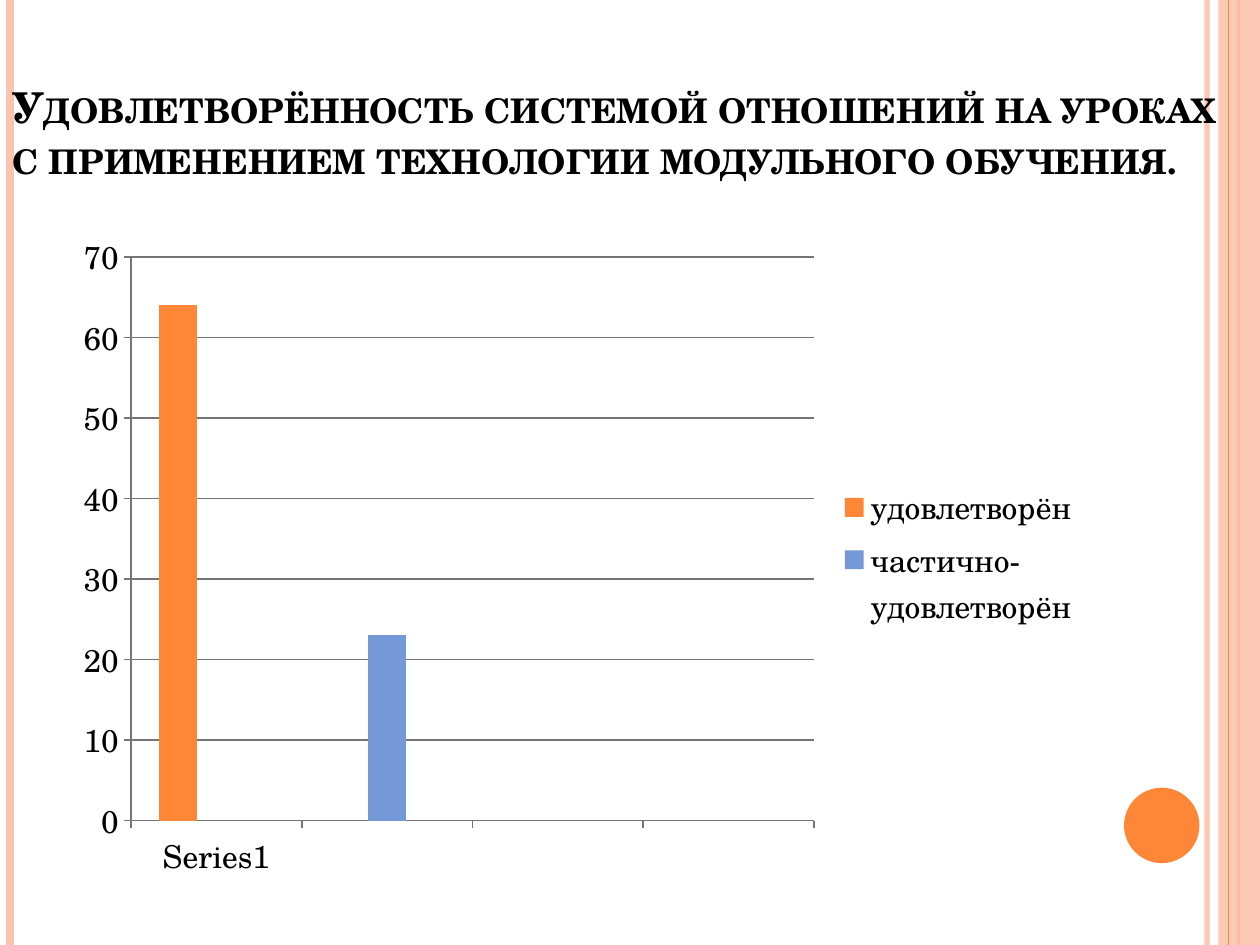
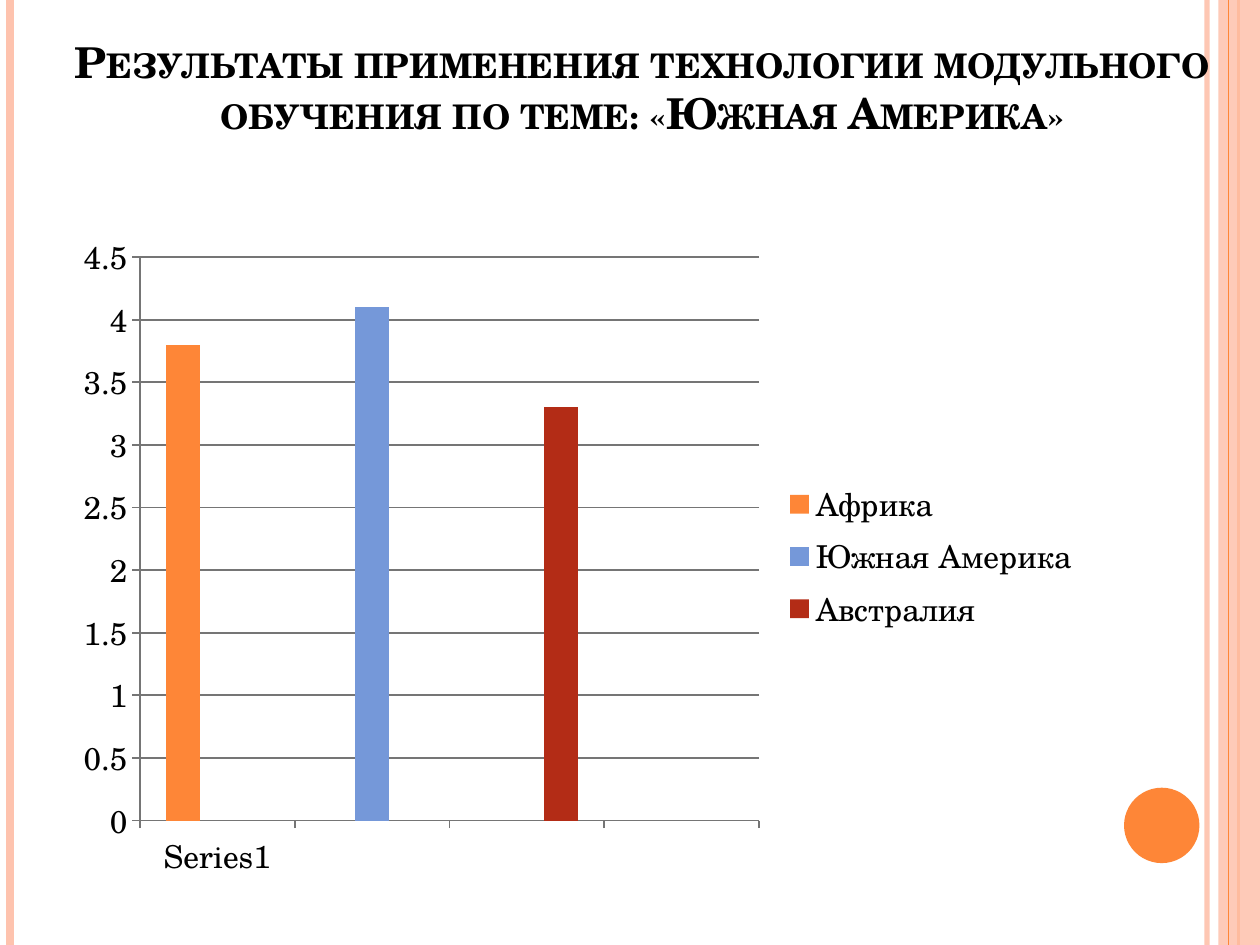
from dataclasses import dataclass

from lxml.etree import SubElement
from pptx import Presentation
from pptx.chart.data import CategoryChartData
from pptx.dml.color import RGBColor as RGB
from pptx.enum.chart import XL_CHART_TYPE as ChartType, XL_LEGEND_POSITION as LegendPos, XL_TICK_MARK as Tick
from pptx.enum.shapes import MSO_CONNECTOR as Connector, MSO_SHAPE as Shape
from pptx.enum.text import MSO_ANCHOR as Anchor, MSO_AUTO_SIZE as AutoSize, PP_ALIGN as Align
from pptx.oxml.ns import qn
from pptx.util import Cm, Pt


@dataclass(frozen=True)
class Theme:
    font: str = "TeX Gyre Schola"
    ink: RGB = RGB(0, 0, 0)
    grid: RGB = RGB(0x75, 0x75, 0x75)
    orange: RGB = RGB(0xFE, 0x86, 0x37)
    peach: RGB = RGB(0xFE, 0xC3, 0xAE)
    blue: RGB = RGB(0x75, 0x98, 0xD9)
    red: RGB = RGB(0xB3, 0x2C, 0x16)
    title_size: float = 24.3
    chart_size: float = 18


theme = Theme()


def write_title(frame, text, align=Align.LEFT, inset=0.13):
    frame.word_wrap = True
    frame.auto_size = AutoSize.NONE
    frame.vertical_anchor = Anchor.BOTTOM
    frame.margin_bottom = Cm(inset)
    paragraph = frame.paragraphs[0]
    paragraph.alignment = align
    run = paragraph.add_run()
    run.text = text
    run.font.name = theme.font
    run.font.size = Pt(theme.title_size)
    run.font.bold = True
    run.font.color.rgb = theme.ink
    run._r.get_or_add_rPr().set("cap", "small")


deck = Presentation()
deck.slide_width, deck.slide_height = Cm(25.4), Cm(19.05)
layout = deck.slide_layouts[5]

surveys = [
    {
        "title": "Удовлетворённость системой отношений на уроках с применением технологии модульного обучения.",
        "box": (0, 0.76, 25.4, 3.96), "align": Align.LEFT, "inset": 1.03,
        "answers": [("удовлетворён", 64), ("частично-удовлетворён", 23), ("Series 3", None)],
        "top": 70, "step": 10,
    },
    {
        "title": "Результаты применения технологии модульного обучения по теме: «Южная Америка»",
        "box": (0.5, 0.76, 24.9, 3.18), "align": Align.CENTER, "inset": 1.16,
        "answers": [("Африка", 3.8), ("Южная Америка", 4.1), ("Австралия", 3.3)],
        "top": 4.5, "step": 0.5,
    },
]
slides = [deck.slides.add_slide(layout) for survey in surveys]

drawing = slides[0].shapes
stripes = [
    (24.33, theme.peach, 3, 93),
    (0.2, theme.peach, 4.5, 100),
    (24.97, theme.orange, 1.5, 100),
    (24.77, theme.orange, 0.75, 100),
]
decor = []
for x, color, width, opacity in stripes:
    stripe = drawing.add_connector(Connector.STRAIGHT, Cm(x), 0, Cm(x), deck.slide_height)
    stripe.line.color.rgb = color
    stripe.line.width = Pt(width)
    SubElement(stripe.element.spPr, qn("a:effectLst"))
    decor.append((stripe, opacity))

blocks = [
    (Shape.RECTANGLE, (24.56, 0, 0.84, 19.05), theme.peach, 87),
    (Shape.OVAL, (22.66, 15.88, 1.52, 1.52), theme.orange, 100),
]
for outline, box, color, opacity in blocks:
    block = drawing.add_shape(outline, *map(Cm, box))
    block.shadow.inherit = False
    block.fill.solid()
    block.fill.fore_color.rgb = color
    block.line.fill.background()
    decor.append((block, opacity))

decor.insert(3, decor.pop(4))
for order, (part, opacity) in enumerate(decor):
    if opacity < 100:
        tint = part.element.spPr.find(".//" + qn("a:srgbClr"))
        SubElement(tint, qn("a:alpha"), val=str(opacity * 1000))
    part.element.xpath(".//p:cNvPr")[0].set("id", str(20 + order))
    layout.shapes.element.insert(2 + order, part.element)

for slide, survey in zip(slides, surveys):
    heading = slide.shapes.title
    heading.left, heading.top, heading.width, heading.height = map(Cm, survey["box"])
    write_title(heading.text_frame, survey["title"], align=survey["align"], inset=survey["inset"])

    results = CategoryChartData()
    results.categories = ["Series1", "", "", ""]
    for place, (answer, value) in enumerate(survey["answers"]):
        results.add_series(answer, [value if spot == place else None for spot in range(4)])
    chart = slide.shapes.add_chart(
        ChartType.COLUMN_CLUSTERED, Cm(1.27), Cm(4.45), Cm(20.75), Cm(13.54), results
    ).chart
    chart.has_title = False
    chart.font.name = theme.font
    chart.font.size = Pt(theme.chart_size)
    chart.font.color.rgb = theme.ink

    bars = chart.plots[0]
    bars.gap_width = 150
    bars.overlap = 0
    bars.vary_by_categories = False
    for series, color in zip(bars.series, (theme.orange, theme.blue, theme.red)):
        series.format.fill.solid()
        series.format.fill.fore_color.rgb = color

    scale = chart.value_axis
    scale.minimum_scale, scale.maximum_scale = 0, survey["top"]
    scale.major_unit = survey["step"]
    scale.has_major_gridlines = True
    scale.tick_labels.number_format = "General"
    scale.tick_labels.number_format_is_linked = False
    for axis in (scale, chart.category_axis):
        axis.major_tick_mark = Tick.OUTSIDE
        axis.minor_tick_mark = Tick.NONE
    for ruled in (scale, chart.category_axis, scale.major_gridlines):
        ruled.format.line.color.rgb = theme.grid
        ruled.format.line.width = Pt(1)

    chart.has_legend = True
    legend = chart.legend
    legend.position = LegendPos.RIGHT
    legend.include_in_layout = False
    for place, (answer, value) in enumerate(survey["answers"]):
        if value is None:
            entry = legend._element.makeelement(qn("c:legendEntry"))
            SubElement(entry, qn("c:idx"), val=str(place))
            SubElement(entry, qn("c:delete"), val="1")
            legend._element.insert(1, entry)

deck.save("out.pptx")
